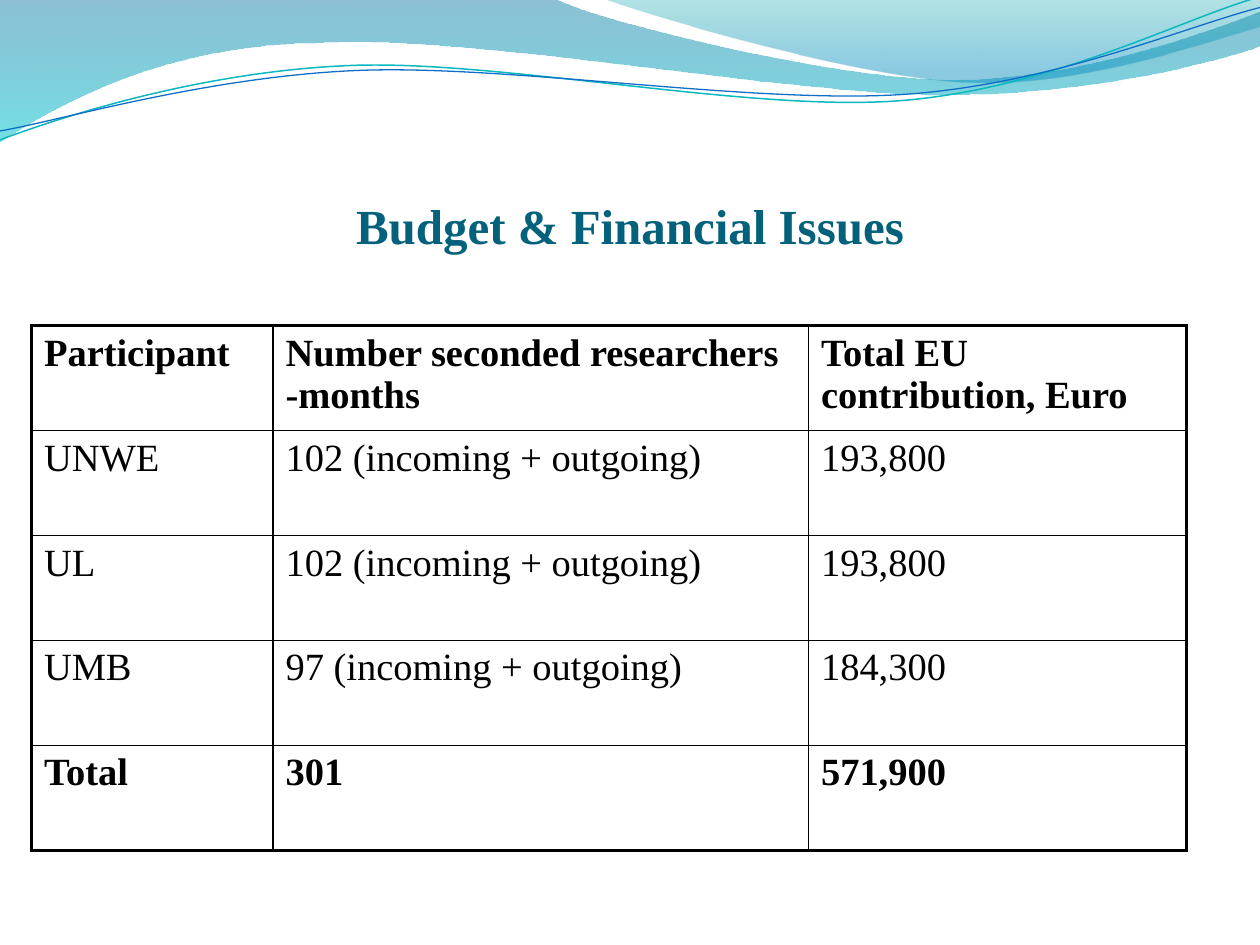
import math

from lxml import etree
from pptx import Presentation, util as u
from pptx.dml.color import RGBColor
from pptx.enum import text
from pptx.oxml.ns import qn

W, H = 10, 7.5
FONT = "Times New Roman"
COLORS = {
    "title": "04617B", "ink": "000000",
    "deep": "0074A1", "aqua": "00C6CF",
    "teal": "00A1A9", "sky": "008BBF",
    "teal_line": "0AB8BF", "blue_line": "0F6FC6",
}

# Each outline: a start point, then straight (2 numbers) or cubic (6 numbers) pieces
BAND = [(0, -0.01), (4.4, -0.01),
        (4.76, 0.17, 6.64, 0.63, 7.58, 0.63), (8.53, 0.63, 9.58, 0.26, 10, 0.09),
        (10.01, 0.36),
        (9.83, 0.44, 8.7, 0.76, 7.46, 0.75), (6.22, 0.75, 3.82, 0.28, 2.57, 0.34),
        (1.29, 0.35, 0.46, 0.83, -0.01, 1.13)]
CREST = [(4.79, -0.01),
         (5.09, 0.11, 6.82, 0.62, 7.69, 0.65), (8.56, 0.69, 9.61, 0.32, 10, 0.21),
         (10, 0)]
TEAL_LINE = [(0, 1.11), (0.48, 0.93, 1.58, 0.57, 2.77, 0.52),
             (3.95, 0.47, 5.93, 0.89, 7.13, 0.8), (8.33, 0.71, 9.38, 0.15, 9.98, -0.02)]
BLUE_LINE = [(0, 1.04), (0.47, 0.96, 1.64, 0.61, 2.83, 0.56),
             (4.03, 0.51, 5.97, 0.83, 7.17, 0.75), (8.36, 0.67, 9.41, 0.21, 10, 0.06)]
TILT = -2.7  # degrees, for the two lines

ROW_HEIGHT = 5 / 6
TABLE_LEFT, TABLE_TOP = 0.25, 3.1 * ROW_HEIGHT
COLUMNS = [23 / 12, 4.25, 3]
ROWS = [
    ("Participant", "Number seconded researchers -months", "Total EU contribution, Euro"),
    ("UNWE", "102 (incoming + outgoing)", "193,800"),
    ("UL", "102 (incoming + outgoing)", "193,800"),
    ("UMB", "97 (incoming + outgoing)", "184,300"),
    ("Total", "301", "571,900"),
]


def rgb(name):
    return RGBColor.from_string(COLORS[name])


def turn(outline, degrees, center):
    """Rotate every point of an outline about a center."""
    cos, sin = math.cos(math.radians(degrees)), math.sin(math.radians(degrees))
    cx, cy = center
    turned = []
    for piece in outline:
        points = zip(piece[::2], piece[1::2])
        turned.append([v for x, y in points
                       for v in (cx + (x - cx) * cos - (y - cy) * sin,
                                 cy + (x - cx) * sin + (y - cy) * cos)])
    return turned


def add_outline(shapes, outline, close):
    start, *rest = [(u.Inches(x), u.Inches(y)) for piece in outline
                    for x, y in zip(piece[::2], piece[1::2])]
    builder = shapes.build_freeform(*start)
    builder.add_line_segments(rest, close=close)
    sp = builder.convert_to_shape()
    sp.shadow.inherit = False
    # Join each three points of a cubic piece into one curve
    segments = iter(list(sp.element.iter(qn("a:lnTo"))))
    for piece in outline[1:]:
        first = next(segments)
        if len(piece) == 6:
            first.tag = qn("a:cubicBezTo")
            for _ in range(2):
                segment = next(segments)
                first.append(segment[0])
                segment.getparent().remove(segment)
    return sp


def add_wave(shapes, outline, stops):
    """Filled wave; stops are (position, colour, opacity in percent)."""
    sp = add_outline(shapes, outline, True)
    sp.line.fill.background()
    sp.fill.gradient()
    sp.fill.gradient_angle = 270
    for stop, (position, color, _) in zip(sp.fill.gradient_stops, stops):
        stop.position = position
        stop.color.rgb = rgb(color)
    for clr, (_, _, opacity) in zip(sp.element.spPr.iter(qn("a:srgbClr")), stops):
        etree.SubElement(clr, qn("a:alpha"), val=str(opacity * 1000))


def add_wave_line(shapes, outline, center, color, width):
    sp = add_outline(shapes, turn(outline, -TILT, center), False)
    sp.rotation = TILT
    sp.fill.background()
    sp.line.color.rgb = rgb(color)
    sp.line.width = u.Pt(width)


def write(tf, content, size, color="ink", bold=False, align=text.PP_ALIGN.LEFT):
    p = tf.paragraphs[0]
    p.alignment = align
    r = p.add_run()
    r.text = content
    r.font.name, r.font.size, r.font.bold = FONT, u.Pt(size), bold
    r.font.color.rgb = rgb(color)


def add_title(s, content):
    tf = s.shapes.add_textbox(u.Inches(0.05 * W), u.Inches(0.77),
                              u.Inches(0.9 * W), u.Inches(1.25)).text_frame
    tf.word_wrap = True
    tf.vertical_anchor = text.MSO_ANCHOR.BOTTOM
    tf.margin_left = tf.margin_right = tf.margin_bottom = 0
    write(tf, content, 28, "title", True, text.PP_ALIGN.CENTER)


def set_borders(cell, widths):
    """Draw cell sides in the order left, right, top, bottom."""
    tcPr = cell._tc.get_or_add_tcPr()
    for side, width in zip("LRTB", widths):
        ln = etree.SubElement(tcPr, qn(f"a:ln{side}"), w=str(u.Pt(width)))
        fill = etree.SubElement(ln, qn("a:solidFill"))
        etree.SubElement(fill, qn("a:srgbClr"), val=COLORS["ink"])


def add_budget_table(s):
    last_row, last_col = len(ROWS) - 1, len(COLUMNS) - 1
    table = s.shapes.add_table(len(ROWS), len(COLUMNS),
                               u.Inches(TABLE_LEFT), u.Inches(TABLE_TOP),
                               u.Inches(sum(COLUMNS)),
                               u.Inches(ROW_HEIGHT * len(ROWS))).table
    table.first_row = table.horz_banding = False
    for column, width in zip(table.columns, COLUMNS):
        column.width = u.Inches(width)
    for i, row in enumerate(ROWS):
        table.rows[i].height = u.Inches(ROW_HEIGHT)
        for j, content in enumerate(row):
            cell = table.cell(i, j)
            # Thick outer frame, thin inner lines
            outer = (j == 0, j == last_col, i == 0, i == last_row)
            set_borders(cell, [2.25 if edge else 1 for edge in outer])
            cell.fill.background()
            write(cell.text_frame, content, 22, bold=i in (0, last_row))


def main():
    prs = Presentation()
    prs.slide_width, prs.slide_height = u.Inches(W), u.Inches(H)
    s = prs.slides.add_slide(prs.slide_layouts[6])

    # Waves along the top edge
    add_wave(s.shapes, BAND, [(0, "deep", 45), (1, "aqua", 55)])
    add_wave(s.shapes, CREST, [(0, "teal", 30), (0.8, "sky", 45)])
    lines = s.shapes.add_group_shape().shapes
    add_wave_line(lines, TEAL_LINE, (4.99, 0.58), "teal_line", 0.85)
    add_wave_line(lines, BLUE_LINE, (5, 0.59), "blue_line", 0.75)

    # Content
    add_title(s, "Budget & Financial Issues")
    add_budget_table(s)
    prs.save("out.pptx")


if __name__ == "__main__":
    main()
